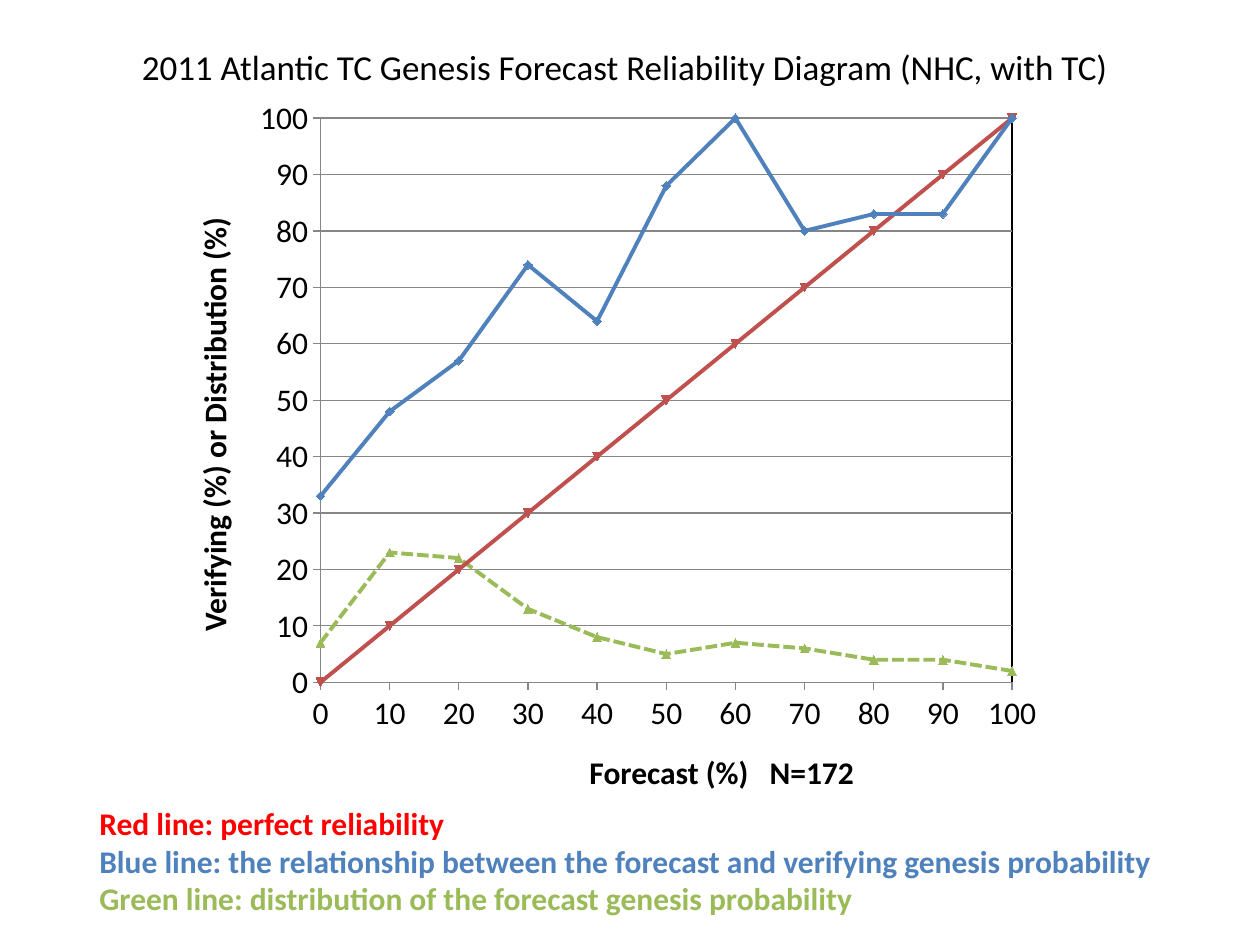
"""Build a slide with a reliability chart, its axis names and a colour key."""
from dataclasses import dataclass, field
from typing import Any

from lxml.etree import fromstring
from pptx import Presentation
from pptx.chart.data import XyChartData
from pptx.dml.color import RGBColor
from pptx.enum.chart import XL_CHART_TYPE, XL_TICK_MARK
from pptx.enum.dml import MSO_LINE
from pptx.enum.text import MSO_ANCHOR, PP_ALIGN
from pptx.oxml.ns import nsdecls
from pptx.util import Inches, Pt

WIDE, HIGH = Inches(10), Inches(7.5)
STEPS = range(0, 101, 10)


@dataclass(frozen=True)
class Theme:
    """Hold the font, type sizes and colours."""
    font: str = "Calibri"
    head: int = 20
    body: int = 18
    ink: str = "000000"
    grid: str = "868686"
    red: str = "FF0000"
    brick: str = "C0504D"
    blue: str = "4F81BD"
    green: str = "9BBB59"


@dataclass(frozen=True)
class Box:
    """Place a rectangle by shares of the slide."""
    left: float
    top: float
    wide: float
    high: float

    def frame(self) -> tuple[int, ...]:
        """Give the rectangle in slide units."""
        return (int(self.left * WIDE), int(self.top * HIGH),
                int(self.wide * WIDE), int(self.high * HIGH))


@dataclass(frozen=True)
class Label:
    """Describe a text box and its coloured lines."""
    box: Box
    lines: tuple[tuple[str, str], ...]
    size: int
    bold: bool = True
    turn: int = 0
    tab: float = 0
    align: Any = PP_ALIGN.LEFT
    form: dict[str, Any] = field(default_factory=dict)


@dataclass(frozen=True)
class Curve:
    """Describe one line of the chart."""
    name: str
    tint: str
    vals: tuple[int, ...]
    dash: Any = None


LOOK = Theme()
PLOT = Box(0.194, 0.09, 0.642, 0.7)
AREA = {"x": 0.094, "y": 0.05, "w": 0.855, "h": 0.853}
CURVES = (
    Curve("Series 1", LOOK.blue, (33, 48, 57, 74, 64, 88, 100, 80, 83, 83, 100)),
    Curve("Series 2", LOOK.brick, tuple(STEPS)),
    Curve("Series 3", LOOK.green, (7, 23, 22, 13, 8, 5, 7, 6, 4, 4, 2),
          MSO_LINE.SQUARE_DOT),
)
LABELS = (
    Label(Box(0.05, 0.04, 0.892, 0.06),
          (("2011 Atlantic TC Genesis Forecast Reliability Diagram (NHC, with TC)",
            LOOK.ink),), LOOK.head, bold=False, align=PP_ALIGN.CENTER,
          form={"vertical_anchor": MSO_ANCHOR.MIDDLE}),
    Label(Box(0.458, 0.79, 0.242, 0.054),
          (("Forecast (%)\tN=172", LOOK.ink),), LOOK.body, tab=1.43),
    Label(Box(-0.006, 0.42, 0.352, 0.054),
          (("Verifying (%) or Distribution (%)", LOOK.ink),), LOOK.body,
          turn=270, form={"word_wrap": False}),
    Label(Box(0.069, 0.844, 0.861, 0.135),
          (("Red line: perfect reliability", LOOK.red),
           ("Blue line: the relationship between the forecast and verifying "
            "genesis probability", LOOK.blue),
           ("Green line: distribution of the forecast genesis probability",
            LOOK.green)), LOOK.body, form={"word_wrap": False}),
)


def apply(thing: Any, form: dict[str, Any]) -> None:
    """Set each named value on an object."""
    for name, val in form.items():
        setattr(thing, name, val)


def style(font: Any, size: int, tint: str, bold: bool) -> None:
    """Give a font its face, size, weight and colour."""
    apply(font, {"name": LOOK.font, "size": Pt(size), "bold": bold})
    font.color.rgb = RGBColor.from_string(tint)


def stroke(line: Any, tint: str, width: float) -> None:
    """Give a line its colour and width."""
    line.color.rgb = RGBColor.from_string(tint)
    line.width = Pt(width)


def write(slide: Any, label: Label) -> None:
    """Draw one text box."""
    shape = slide.shapes.add_textbox(*label.box.frame())
    shape.rotation = label.turn
    text = shape.text_frame
    apply(text, {"word_wrap": True} | label.form)
    for spot, (words, tint) in enumerate(label.lines):
        para = text.add_paragraph() if spot else text.paragraphs[0]
        para.alignment = label.align
        run = para.add_run()
        run.text = words
        style(run.font, label.size, tint, label.bold)
        if label.tab:
            para._p.get_or_add_pPr().append(fromstring(
                f'<a:tabLst {nsdecls("a")}>'
                f'<a:tab pos="{Inches(label.tab)}" algn="l"/></a:tabLst>'))


def fit(chart: Any) -> None:
    """Fix the inner plot area and give it a thin border."""
    area = chart._chartSpace.chart.plotArea
    for old in area.findall("{*}layout"):
        area.remove(old)
    modes = "".join(f'<c:{key}Mode val="edge"/>' for key in "xy")
    sizes = "".join(f'<c:{key} val="{val}"/>' for key, val in AREA.items())
    area.insert(0, fromstring(
        f'<c:layout {nsdecls("c")}><c:manualLayout>'
        f'<c:layoutTarget val="inner"/>{modes}{sizes}'
        '</c:manualLayout></c:layout>'))
    area.append(fromstring(
        f'<c:spPr {nsdecls("c", "a")}><a:noFill/><a:ln w="{Pt(0.75)}">'
        f'<a:solidFill><a:srgbClr val="{LOOK.ink}"/></a:solidFill>'
        '</a:ln></c:spPr>'))


def plot(slide: Any) -> None:
    """Draw the chart with its three lines."""
    data = XyChartData()
    for curve in CURVES:
        row = data.add_series(curve.name)
        for x, y in zip(STEPS, curve.vals):
            row.add_data_point(x, y)
    chart = slide.shapes.add_chart(
        XL_CHART_TYPE.XY_SCATTER_LINES, *PLOT.frame(), data).chart
    apply(chart, {"has_legend": False, "has_title": False})
    style(chart.font, LOOK.body, LOOK.ink, False)
    chart.plots[0].vary_by_categories = False
    for axis, grid in ((chart.category_axis, False), (chart.value_axis, True)):
        apply(axis, {"minimum_scale": 0, "maximum_scale": 100, "major_unit": 10,
                     "major_tick_mark": XL_TICK_MARK.OUTSIDE,
                     "minor_tick_mark": XL_TICK_MARK.NONE,
                     "has_major_gridlines": grid, "has_title": False})
        apply(axis.tick_labels, {"number_format": "General",
                                 "number_format_is_linked": False})
        stroke(axis.format.line, LOOK.grid, 0.75)
        if grid:
            stroke(axis.major_gridlines.format.line, LOOK.grid, 0.75)
    for row, curve in zip(chart.plots[0].series, CURVES):
        stroke(row.format.line, curve.tint, 2.25)
        row.format.line.dash_style = curve.dash
        row.smooth = False
        row.marker.size = 5
        row.marker.format.fill.solid()
        row.marker.format.fill.fore_color.rgb = RGBColor.from_string(curve.tint)
        stroke(row.marker.format.line, curve.tint, 0.75)
    fit(chart)


def main() -> None:
    """Make the deck and save it."""
    deck = Presentation()
    apply(deck, {"slide_width": WIDE, "slide_height": HIGH})
    slide = deck.slides.add_slide(deck.slide_layouts[6])
    plot(slide)
    for label in LABELS:
        write(slide, label)
    deck.save("out.pptx")


if __name__ == "__main__":
    main()
